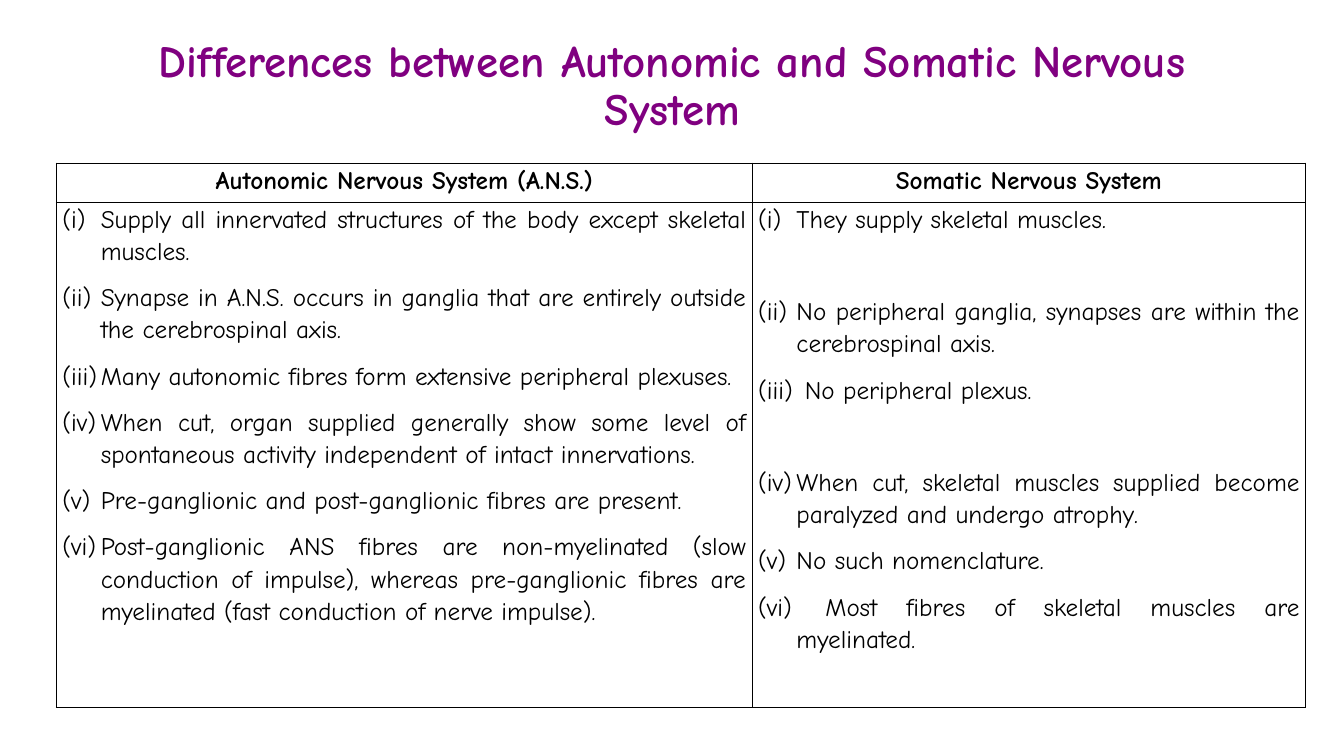
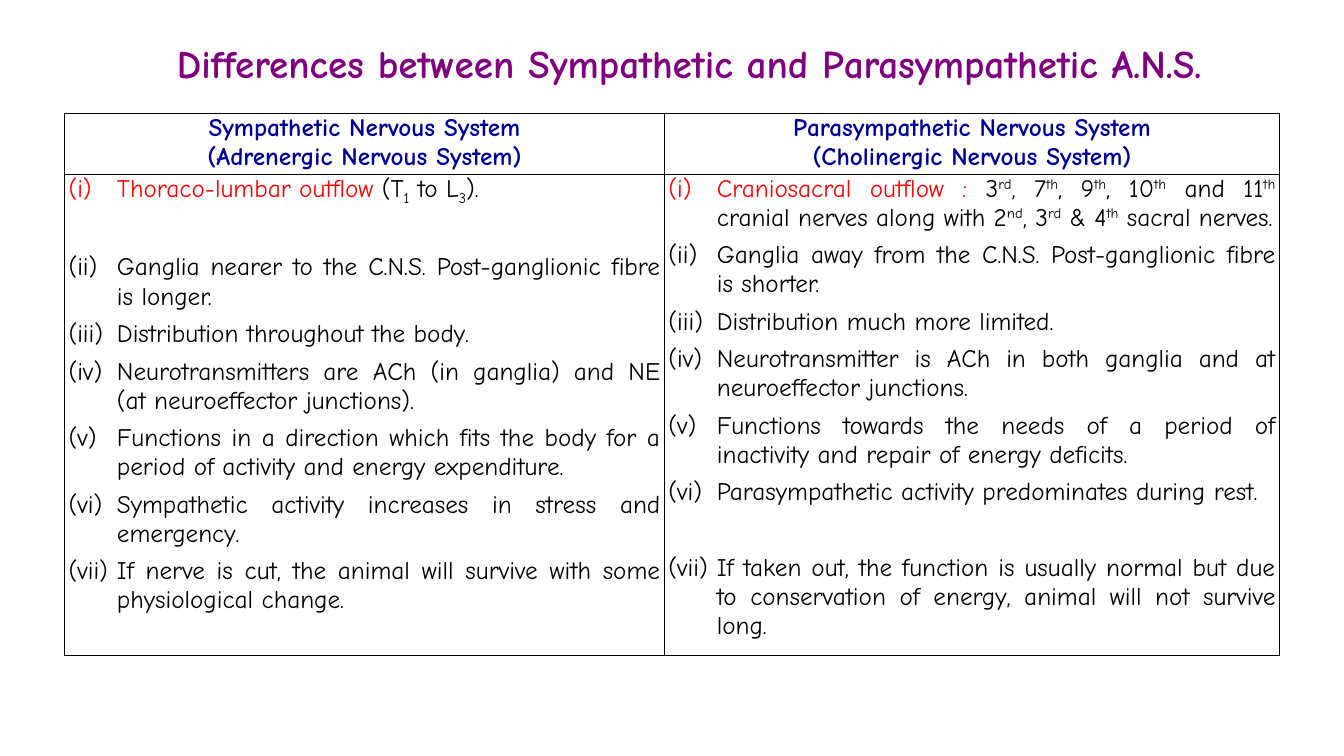
from dataclasses import dataclass

from lxml import etree
from pptx import Presentation, util as u
from pptx.dml import color
from pptx.enum import text
from pptx.oxml import ns

FONT = "Comic Neue"
PURPLE, NAVY, RED, BLACK = "800080", "000099", "FF0000", "000000"
BODY_SIZE = 18
BASELINES = {"sub": "-25000", "sup": "30000"}


@dataclass
class Column:
    """One side of a comparison; numbers in wide_before mark points set a line lower."""
    width: float
    heading: list
    points: list
    wide_before: tuple = ()


@dataclass
class TableStyle:
    heading_color: str
    inset: float
    indent: float
    gap: int
    wide_gap: int
    line_spacing: object = None
    heading_after: int = 0


def rgb(value):
    return color.RGBColor.from_string(value)


def add_span(para, words, size, tint=BLACK, bold=False, role=None):
    span = para.add_run()
    span.text = words
    span.font.name = FONT
    span.font.size = u.Pt(size)
    span.font.bold = bold
    span.font.color.rgb = rgb(RED if role == "lead" else tint)
    if role in BASELINES:
        span.font._element.set("baseline", BASELINES[role])


def add_title(page, words, left, top, width, size):
    box = page.shapes.add_textbox(*map(u.Inches, (left, top, width, 1.45)))
    frame = box.text_frame
    frame.word_wrap = True
    frame.vertical_anchor = text.MSO_ANCHOR.MIDDLE
    para = frame.paragraphs[0]
    para.alignment = text.PP_ALIGN.CENTER
    para.line_spacing = 0.9
    add_span(para, words, size, PURPLE, bold=True)


def number_paragraph(para, indent):
    """Give a paragraph a hanging (i), (ii), (iii) number."""
    props = para._p.get_or_add_pPr()
    props.set("marL", str(u.Inches(indent)))
    props.set("indent", str(-u.Inches(indent)))
    etree.SubElement(props, ns.qn("a:buAutoNum"), type="romanLcParenBoth")


def prepare_cell(cell, inset):
    """Clear the fill, set the margins and draw a thin black border."""
    cell.fill.background()
    cell.margin_left = cell.margin_right = u.Inches(inset)
    cell.margin_top = cell.margin_bottom = 0
    props = cell._tc.get_or_add_tcPr()
    for place, side in enumerate(("lnL", "lnR", "lnT", "lnB")):
        line = etree.Element(ns.qn(f"a:{side}"), w=str(u.Pt(1)))
        fill = etree.SubElement(line, ns.qn("a:solidFill"))
        etree.SubElement(fill, ns.qn("a:srgbClr"), val=BLACK)
        props.insert(place, line)


def fill_paragraphs(cell, count):
    """Return the given number of paragraphs of an empty cell."""
    frame = cell.text_frame
    for _ in range(count - 1):
        frame.add_paragraph()
    return frame.paragraphs


def fill_heading(cell, lines, style):
    for para, words in zip(fill_paragraphs(cell, len(lines)), lines):
        para.alignment = text.PP_ALIGN.CENTER
        para.line_spacing = style.line_spacing
        para.space_after = u.Pt(style.heading_after)
        add_span(para, words, BODY_SIZE, style.heading_color, bold=True)


def fill_points(cell, column, style):
    paras = fill_paragraphs(cell, len(column.points))
    for number, (para, point) in enumerate(zip(paras, column.points), 1):
        number_paragraph(para, style.indent)
        para.alignment = text.PP_ALIGN.JUSTIFY
        para.line_spacing = style.line_spacing
        if number > 1:
            wide = number in column.wide_before
            para.space_before = u.Pt(style.wide_gap if wide else style.gap)
        spans = [(point, None)] if isinstance(point, str) else point
        for words, role in spans:
            add_span(para, words, BODY_SIZE, role=role)


def add_comparison(page, left, top, heights, columns, style):
    width = sum(column.width for column in columns)
    frame = page.shapes.add_table(
        2, len(columns), *map(u.Inches, (left, top, width, sum(heights))))
    table = frame.table
    table.first_row = table.horz_banding = False
    for row, height in zip(table.rows, heights):
        row.height = u.Inches(height)
    for index, column in enumerate(columns):
        table.columns[index].width = u.Inches(column.width)
        heading, body = table.cell(0, index), table.cell(1, index)
        for cell in (heading, body):
            prepare_cell(cell, style.inset)
        fill_heading(heading, column.heading, style)
        fill_points(body, column, style)


def build_autonomic_somatic(page):
    add_title(page, "Differences between Autonomic and Somatic Nervous System",
              0.92, 0.14, 11.5, 32)
    autonomic = Column(6.9, ["Autonomic Nervous System (A.N.S.)"], [
        "Supply all innervated structures of the body except skeletal muscles.",
        "Synapse in A.N.S. occurs in ganglia that are entirely outside the "
        "cerebrospinal axis.",
        "Many autonomic fibres form extensive peripheral plexuses.",
        "When cut, organ supplied generally show some level of spontaneous "
        "activity independent of intact innervations.",
        "Pre-ganglionic and post-ganglionic fibres are present.",
        "Post-ganglionic ANS fibres are non-myelinated (slow conduction of "
        "impulse), whereas pre-ganglionic fibres are myelinated (fast "
        "conduction of nerve impulse).",
    ])
    somatic = Column(5.49, ["Somatic Nervous System"], [
        "They supply skeletal muscles.",
        "No peripheral ganglia, synapses are within the cerebrospinal axis.",
        " No peripheral plexus.",
        "When cut, skeletal muscles supplied become paralyzed and undergo "
        "atrophy.",
        "No such nomenclature.",
        " Most fibres of skeletal muscles are myelinated.",
    ], wide_before=(2, 4))
    style = TableStyle(BLACK, inset=0.06, indent=0.38, gap=10, wide_gap=43,
                       line_spacing=u.Pt(23), heading_after=3)
    add_comparison(page, 0.56, 1.62, (0.39, 5.01), (autonomic, somatic), style)


def build_sympathetic_parasympathetic(page):
    add_title(page, "Differences between Sympathetic and Parasympathetic A.N.S.",
              0.72, -0.07, 12.23, 28)
    sympathetic = Column(
        5.95, ["Sympathetic Nervous System", "(Adrenergic Nervous System)"], [
            [("Thoraco-lumbar outflow", "lead"), (" (T", None), ("1", "sub"),
             (" to L", None), ("3", "sub"), (").", None)],
            "Ganglia nearer to the C.N.S. Post-ganglionic fibre is longer.",
            "Distribution throughout the body.",
            "Neurotransmitters are ACh (in ganglia) and NE (at neuroeffector "
            "junctions).",
            "Functions in a direction which fits the body for a period of "
            "activity and energy expenditure.",
            "Sympathetic activity increases in stress and emergency.",
            "If nerve is cut, the animal will survive with some physiological "
            "change.",
        ], wide_before=(2,))
    parasympathetic = Column(
        6.1, ["Parasympathetic Nervous System", "(Cholinergic Nervous System)"], [
            [("Craniosacral outflow :", "lead"), (" 3", None), ("rd", "sup"),
             (", 7", None), ("th", "sup"), (", 9", None), ("th", "sup"),
             (", 10", None), ("th", "sup"), (" and 11", None), ("th", "sup"),
             (" cranial nerves along with 2", None), ("nd", "sup"),
             (", 3", None), ("rd", "sup"), (" & 4", None), ("th", "sup"),
             (" sacral nerves.", None)],
            "Ganglia away from the C.N.S. Post-ganglionic fibre is shorter.",
            "Distribution much more limited.",
            "Neurotransmitter is ACh in both ganglia and at neuroeffector "
            "junctions.",
            "Functions towards the needs of a period of inactivity and repair "
            "of energy deficits.",
            "Parasympathetic activity predominates during rest.",
            "If taken out, the function is usually normal but due to "
            "conservation of energy, animal will not survive long.",
        ], wide_before=(7,))
    style = TableStyle(NAVY, inset=0.04, indent=0.48, gap=6, wide_gap=33)
    add_comparison(page, 0.64, 1.13, (0.58, 4.62),
                   (sympathetic, parasympathetic), style)


def main():
    deck = Presentation()
    deck.slide_width, deck.slide_height = u.Inches(13.33), u.Inches(7.5)
    for build in (build_autonomic_somatic, build_sympathetic_parasympathetic):
        build(deck.slides.add_slide(deck.slide_layouts[6]))
    deck.save("out.pptx")


if __name__ == "__main__":
    main()
